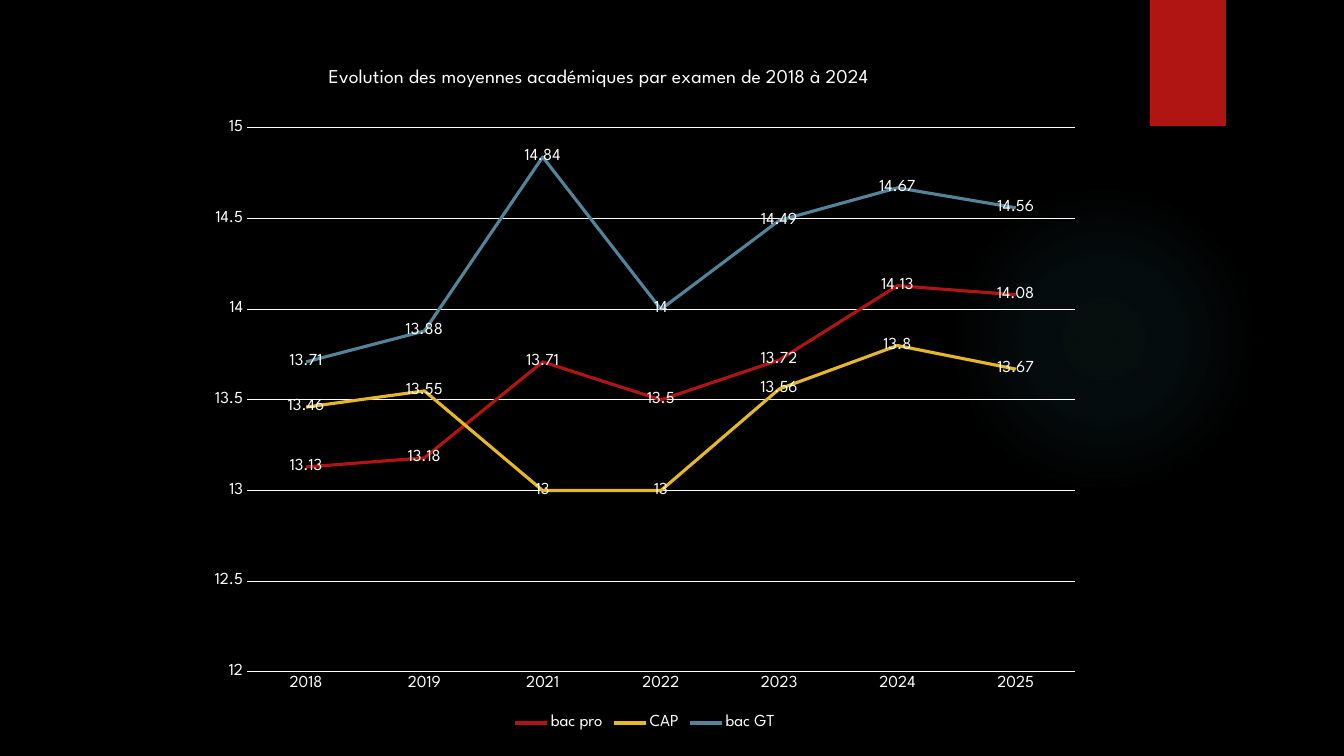
from lxml import etree
from pptx import Presentation
from pptx.chart.data import CategoryChartData
from pptx.dml.color import RGBColor
from pptx.enum.chart import XL_CHART_TYPE, XL_LABEL_POSITION, XL_LEGEND_POSITION, XL_TICK_MARK
from pptx.enum.shapes import MSO_SHAPE as SHAPE
from pptx.oxml import parse_xml
from pptx.oxml.ns import nsdecls, qn
from pptx.util import Emu, Pt

EMU_PER_PX = 12192000 / 1344
FONT = "League Spartan"
COLORS = {"black": "000000", "white": "FFFFFF", "glow": "50B9C1",
          "red": "B01513", "yellow": "E6B729", "blue": "54849A"}
YEARS = ["2018", "2019", "2021", "2022", "2023", "2024", "2025"]
AVERAGES = [
    ("bac pro", "red", [13.13, 13.18, 13.71, 13.5, 13.72, 14.13, 14.08]),
    ("CAP", "yellow", [13.46, 13.55, 13, 13, 13.56, 13.8, 13.67]),
    ("bac GT", "blue", [13.71, 13.88, 14.84, 14, 14.49, 14.67, 14.56]),
]
TITLE = "Evolution des moyennes académiques par examen de 2018 à 2024"


def px(length):
    return Emu(round(length * EMU_PER_PX))


def rgb(name):
    return RGBColor.from_string(COLORS[name])


def style_font(font, size):
    font.name = FONT
    font.size = Pt(size)
    font.bold = False
    font.color.rgb = rgb("white")


def style_line(line, color, width):
    line.color.rgb = rgb(color)
    line.width = Pt(width)


def add_plain_shape(slide, kind, box):
    shape = slide.shapes.add_shape(kind, *map(px, box))
    shape.shadow.inherit = False
    shape.line.fill.background()
    return shape


def add_glow(slide, box):
    """Draw a circle that fades from its centre to nothing."""
    glow = add_plain_shape(slide, SHAPE.OVAL, box)
    stops = "".join(
        f'<a:gs pos="{position * 1000}"><a:srgbClr val="{COLORS["glow"]}">'
        f'<a:alpha val="{alpha * 1000}"/></a:srgbClr></a:gs>'
        for position, alpha in [(0, 7), (36, 6), (69, 0)])
    gradient = parse_xml(
        f'<a:gradFill {nsdecls("a")}><a:gsLst>{stops}</a:gsLst><a:path path="circle">'
        '<a:fillToRect l="50000" t="50000" r="50000" b="50000"/></a:path></a:gradFill>')
    glow._element.spPr.find(qn("a:prstGeom")).addnext(gradient)


def add_tab(slide, box):
    tab = add_plain_shape(slide, SHAPE.RECTANGLE, box)
    tab.fill.solid()
    tab.fill.fore_color.rgb = rgb("red")
    tab._element.spPr.find(qn("a:effectLst")).append(parse_xml(
        f'<a:outerShdw {nsdecls("a")} blurRad="{Pt(3)}" dist="{Pt(2)}" dir="5400000">'
        f'<a:srgbClr val="{COLORS["black"]}"><a:alpha val="45000"/></a:srgbClr>'
        '</a:outerShdw>'))


def manual_layout(inner=False, **fractions):
    """Build a chart layout element from fractions of the chart's size."""
    layout = etree.Element(qn("c:layout"))
    manual = etree.SubElement(layout, qn("c:manualLayout"))
    settings = {"layoutTarget": "inner"} if inner else {}
    settings |= {"xMode": "edge", "yMode": "edge"}
    settings |= {name: f"{value:.4f}" for name, value in fractions.items()}
    for name, value in settings.items():
        etree.SubElement(manual, qn(f"c:{name}")).set("val", value)
    return layout


def replace_layout(parent, layout, index):
    for old in parent.findall(qn("c:layout")):
        parent.remove(old)
    parent.insert(index, layout)


def style_axes(chart):
    for axis in (chart.category_axis, chart.value_axis):
        axis.major_tick_mark = axis.minor_tick_mark = XL_TICK_MARK.NONE
        style_font(axis.tick_labels.font, 12)
    style_line(chart.category_axis.format.line, "white", 0.75)
    values = chart.value_axis
    values.minimum_scale, values.maximum_scale, values.major_unit = 12, 15, 0.5
    values.format.line.fill.background()
    style_line(values.major_gridlines.format.line, "white", 0.75)


def style_series(series, color):
    series.smooth = False
    style_line(series.format.line, color, 2.25)
    labels = series.data_labels
    labels.show_value = True
    labels.position = XL_LABEL_POSITION.CENTER
    style_font(labels.font, 12)


def add_averages_chart(slide, box):
    left, top, width, height = box
    data = CategoryChartData(number_format="General")
    data.categories = YEARS
    for name, _, values in AVERAGES:
        data.add_series(name, values)
    chart = slide.shapes.add_chart(XL_CHART_TYPE.LINE, *map(px, box), data).chart
    style_font(chart.font, 10)
    style_axes(chart)
    chart.plots[0].vary_by_categories = False
    for series, (_, color, _) in zip(chart.plots[0].series, AVERAGES):
        style_series(series, color)

    chart.has_title = True
    title = chart.chart_title
    title.include_in_layout = False
    title.text_frame.text = TITLE
    style_font(title.text_frame.paragraphs[0].runs[0].font, 14)
    replace_layout(title._element, manual_layout(x=128 / width, y=6 / height), 1)

    chart.has_legend = True
    chart.legend.position = XL_LEGEND_POSITION.BOTTOM
    chart.legend.include_in_layout = False
    style_font(chart.legend.font, 12)
    plot_layout = manual_layout(inner=True, x=50 / width, y=70 / height,
                                w=828 / width, h=544 / height)
    replace_layout(chart._chartSpace.chart.plotArea, plot_layout, 0)


def main():
    deck = Presentation()
    deck.slide_width, deck.slide_height = px(1344), px(756)
    slide = deck.slides.add_slide(deck.slide_layouts[6])
    slide.background.fill.solid()
    slide.background.fill.fore_color.rgb = rgb("black")
    add_glow(slide, (949, 184, 310, 310))
    add_tab(slide, (1150, 0, 76, 126))
    add_averages_chart(slide, (197, 58, 896, 677))
    deck.save("out.pptx")


if __name__ == "__main__":
    main()
